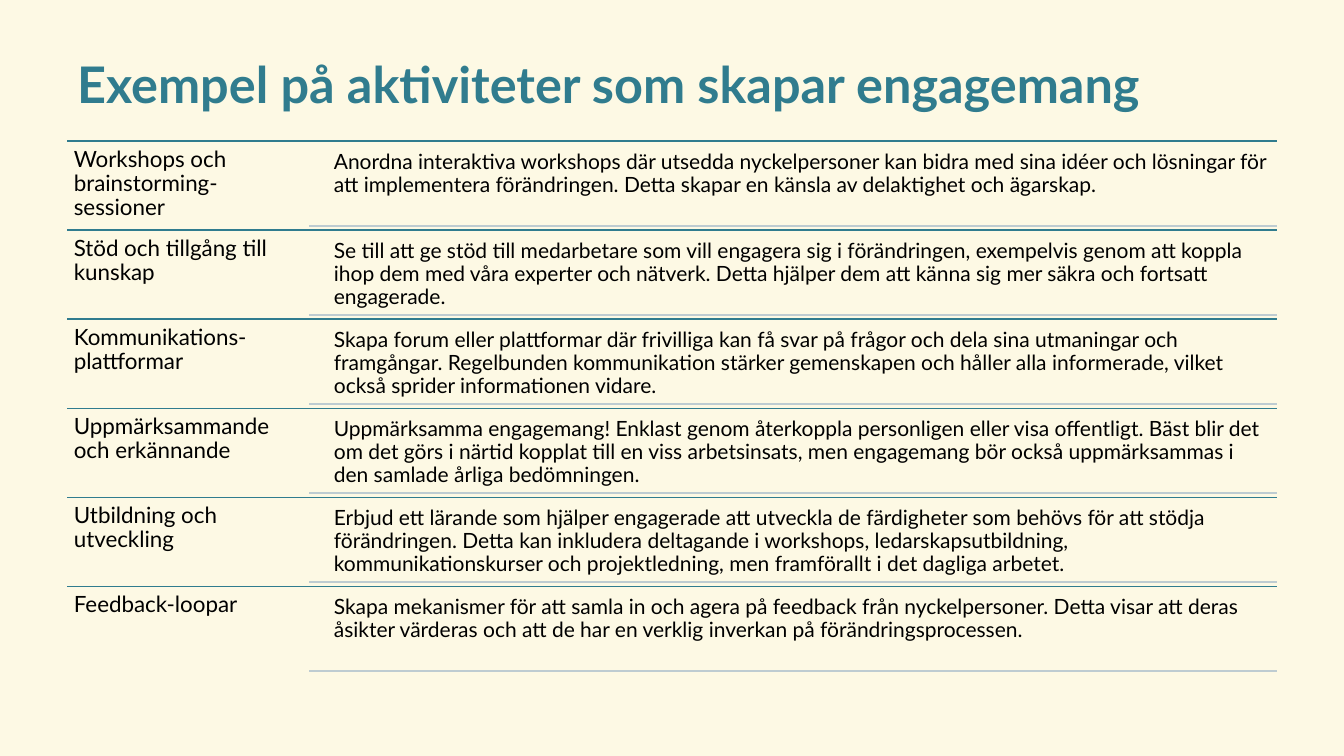
import pptx
import pptx.util
import pptx.dml.color
import pptx.enum.shapes
import pptx.enum.text
import pptx.oxml.ns
import lxml.etree

Pt = pptx.util.Pt

COLOURS = {
    "background": "FDF9E4",
    "teal": "307C8E",
    "pale": "BECCD1",
    "text": "000000",
}
FONT = "Lato"

LEFT, RIGHT = 48, 912
LABEL_WIDTH = 172.8
DETAIL_LEFT = 234
FIRST_ROW_TOP = 100.8
ROW_HEIGHT = 63.6
DETAIL_GAP = 3

ACTIVITIES = [
    ("Workshops och brainstorming-sessioner",
     "Anordna interaktiva workshops där utsedda nyckelpersoner kan bidra med sina "
     "idéer och lösningar för att implementera förändringen. Detta skapar en känsla "
     "av delaktighet och ägarskap."),
    ("Stöd och tillgång till kunskap",
     "Se till att ge stöd till medarbetare som vill engagera sig i förändringen, "
     "exempelvis genom att koppla ihop dem med våra experter och nätverk. Detta "
     "hjälper dem att känna sig mer säkra och fortsatt engagerade."),
    ("Kommunikations-plattformar",
     "Skapa forum eller plattformar där frivilliga kan få svar på frågor och dela "
     "sina utmaningar och framgångar. Regelbunden kommunikation stärker gemenskapen "
     "och håller alla informerade, vilket också sprider informationen vidare."),
    ("Uppmärksammande och erkännande",
     "Uppmärksamma engagemang! Enklast genom återkoppla personligen eller visa "
     "offentligt. Bäst blir det om det görs i närtid kopplat till en viss "
     "arbetsinsats, men engagemang bör också uppmärksammas i den samlade årliga "
     "bedömningen."),
    ("Utbildning och utveckling",
     "Erbjud ett lärande som hjälper engagerade att utveckla de färdigheter som "
     "behövs för att stödja förändringen. Detta kan inkludera deltagande i "
     "workshops, ledarskapsutbildning, kommunikationskurser och projektledning, men "
     "framförallt i det dagliga arbetet."),
    ("Feedback-loopar",
     "Skapa mekanismer för att samla in och agera på feedback från nyckelpersoner. "
     "Detta visar att deras åsikter värderas och att de har en verklig inverkan på "
     "förändringsprocessen."),
]


def colour(name):
    return pptx.dml.color.RGBColor.from_string(COLOURS[name])


def add_text(page, text, left, top, width, height, size, inset,
             spacing=0.9, ink="text", bold=False):
    box = page.shapes.add_textbox(Pt(left), Pt(top), Pt(width), Pt(height))
    frame = box.text_frame
    frame.word_wrap = True
    frame.margin_left = frame.margin_right = Pt(inset)
    frame.margin_top = frame.margin_bottom = Pt(inset)
    frame.text = text
    para = frame.paragraphs[0]
    para.line_spacing = spacing
    span = para.runs[0]
    span.font.name = FONT
    span.font.size = Pt(size)
    span.font.bold = bold
    span.font.color.rgb = colour(ink)
    return box


def add_rule(page, left, y, ink):
    """Draw a thin horizontal line from left to the right margin."""
    rule = page.shapes.add_connector(
        pptx.enum.shapes.MSO_CONNECTOR.STRAIGHT, Pt(left), Pt(y), Pt(RIGHT), Pt(y))
    rule.line.color.rgb = colour(ink)
    rule.line.width = Pt(1)
    lxml.etree.SubElement(rule._element.spPr, pptx.oxml.ns.qn("a:effectLst"))


def add_title(page, text):
    box = add_text(page, text, LEFT, 28, RIGHT - LEFT, 59, size=36, inset=7.2,
                   spacing=1.1, ink="teal", bold=True)
    box.text_frame.vertical_anchor = pptx.enum.text.MSO_ANCHOR.MIDDLE


def add_activity(page, top, label, detail):
    detail_top = top + DETAIL_GAP
    detail_height = ROW_HEIGHT - 2 * DETAIL_GAP
    add_rule(page, LEFT, top, "teal")
    add_text(page, label, LEFT, top, LABEL_WIDTH, ROW_HEIGHT, size=16, inset=4.8)
    add_text(page, detail, DETAIL_LEFT, detail_top, RIGHT - DETAIL_LEFT,
             detail_height, size=15, inset=4.5)
    add_rule(page, LEFT + LABEL_WIDTH, detail_top + detail_height, "pale")


def main():
    deck = pptx.Presentation()
    deck.slide_width, deck.slide_height = Pt(960), Pt(540)
    page = deck.slides.add_slide(deck.slide_layouts[6])
    page.background.fill.solid()
    page.background.fill.fore_color.rgb = colour("background")

    add_title(page, "Exempel på aktiviteter som skapar engagemang")
    for row, (label, detail) in enumerate(ACTIVITIES):
        add_activity(page, FIRST_ROW_TOP + row * ROW_HEIGHT, label, detail)

    deck.save("out.pptx")


if __name__ == "__main__":
    main()
